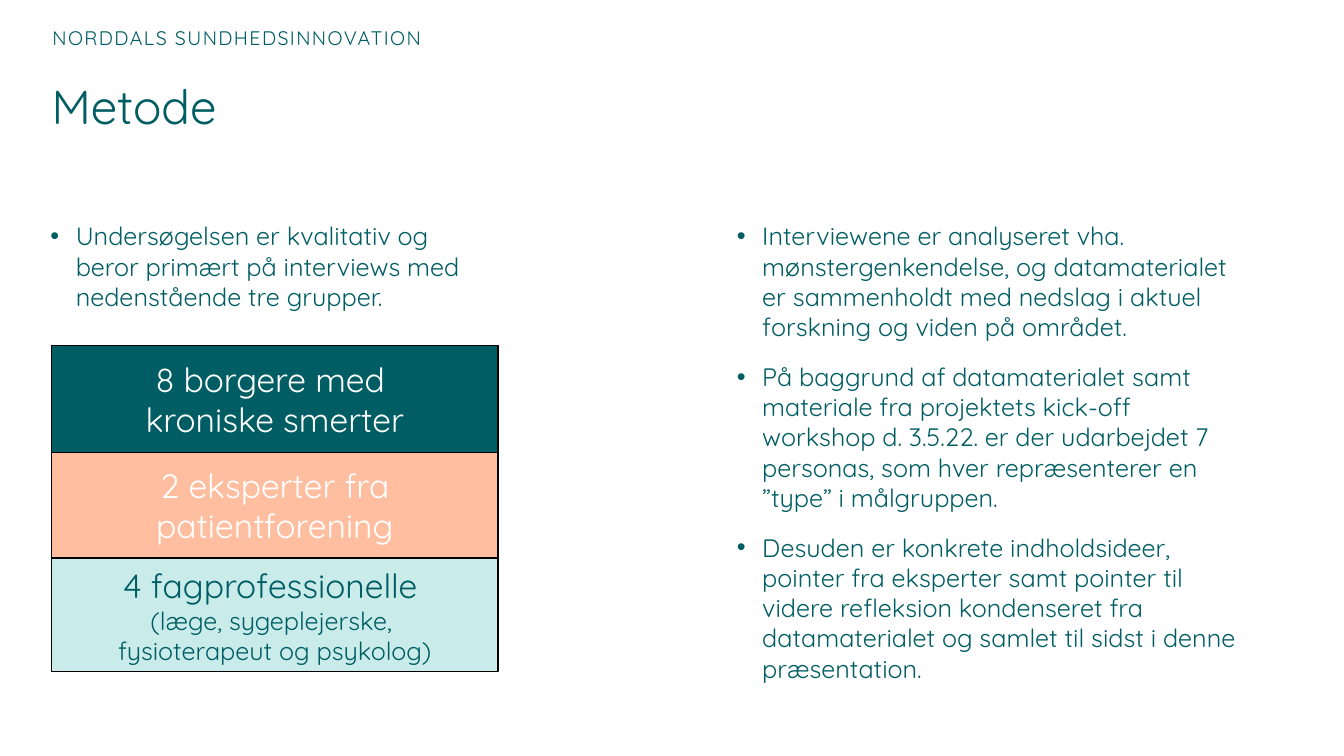
import pptx
import pptx.util
import pptx.dml.color
import pptx.enum.shapes
import pptx.enum.text
import pptx.oxml
import pptx.oxml.ns
from pptx.util import Cm

COLORS = {"teal": "005D63", "peach": "FFBE9F", "mint": "C9ECEB",
          "white": "FFFFFF", "black": "000000"}
FONT = "Quicksand"
ALIGN = pptx.enum.text.PP_ALIGN
ANCHOR = pptx.enum.text.MSO_ANCHOR

# Content: each paragraph is a list of (text, size) pieces
HEADER = [[("NORDDALS SUNDHEDSINNOVATION", 14)]]
TITLE = [[("Metode", 34)]]
BASIS = ["Undersøgelsen er kvalitativ og beror primært på interviews med "
         "nedenstående tre grupper."]
ANALYSIS = [
    "Interviewene er analyseret vha. mønstergenkendelse, og datamaterialet er "
    "sammenholdt med nedslag i aktuel forskning og viden på området.",
    "På baggrund af datamaterialet samt materiale fra projektets kick-off workshop "
    "d. 3.5.22. er der udarbejdet 7 personas, som hver repræsenterer en ”type” i målgruppen.",
    "Desuden er konkrete indholdsideer, pointer fra eksperter samt pointer til videre "
    "refleksion kondenseret fra datamaterialet og samlet til sidst i denne præsentation.",
]
# Groups from top to bottom: pieces, fill, text colour, height in cm
GROUPS = [
    ([("8 borgere med \nkroniske smerter", 24)], "teal", "white", 2.7),
    ([("2 eksperter fra patientforening", 24)], "peach", "white", 2.65),
    ([("4 fagprofessionelle \n", 24),
      ("(læge, sygeplejerske, \nfysioterapeut og psykolog)", 18)], "mint", "teal", 2.87),
]
GROUPS_LEFT, GROUPS_TOP, GROUPS_WIDTH = 1.3, 8.71, 11.25
COLUMNS = [(BASIS, 1.27, 11.25), (ANALYSIS, 18.57, 12.62)]
COLUMNS_TOP, COLUMNS_HEIGHT = 5.56, 12.32


def rgb(name):
    return pptx.dml.color.RGBColor.from_string(COLORS[name])


def write(holder, paragraphs, color="teal", align=ALIGN.LEFT, anchor=ANCHOR.TOP,
          inset=0, wrap=True, bullet=False, line_spacing=None, after=0, tracking=None):
    frame = holder.text_frame
    frame.auto_size = pptx.enum.text.MSO_AUTO_SIZE.NONE
    frame.word_wrap = wrap
    frame.vertical_anchor = anchor
    if inset is not None:
        frame.margin_left = frame.margin_right = Cm(inset)
        frame.margin_top = frame.margin_bottom = Cm(inset)
    for number, pieces in enumerate(paragraphs):
        paragraph = frame.add_paragraph() if number else frame.paragraphs[0]
        paragraph.alignment = align
        paragraph.space_before = pptx.util.Pt(0)
        paragraph.space_after = pptx.util.Pt(after)
        if line_spacing:
            paragraph.line_spacing = line_spacing
        if bullet:
            properties = paragraph._p.get_or_add_pPr()
            properties.set("marL", str(Cm(0.64)))
            properties.set("indent", str(-Cm(0.64)))
            ns = pptx.oxml.ns.nsdecls("a")
            properties.append(pptx.oxml.parse_xml(f'<a:buFont {ns} typeface="Arial"/>'))
            properties.append(pptx.oxml.parse_xml(f'<a:buChar {ns} char="•"/>'))
        for text, size in pieces:
            for index, line in enumerate(text.split("\n")):
                if index:
                    paragraph.add_line_break()
                if not line:
                    continue
                run = paragraph.add_run()
                run.text = line
                run.font.name = FONT
                run.font.size = pptx.util.Pt(size)
                run.font.color.rgb = rgb(color)
                if tracking:
                    run._r.get_or_add_rPr().set("spc", str(tracking * 100))


presentation = pptx.Presentation()
presentation.slide_width, presentation.slide_height = Cm(33.87), Cm(19.05)
slide = presentation.slides.add_slide(presentation.slide_layouts[5])

# Header and title
header = slide.shapes.add_textbox(Cm(1.32), Cm(0), Cm(15.2), Cm(1.24))
write(header, HEADER, anchor=ANCHOR.BOTTOM, wrap=False, tracking=1)
title = slide.shapes.title
title.left, title.top, title.width, title.height = Cm(1.3), Cm(2.1), Cm(15.2), Cm(2.7)
write(title, TITLE, line_spacing=0.9)

# Bullet columns
for bullets, left, width in COLUMNS:
    column = slide.shapes.add_textbox(Cm(left), Cm(COLUMNS_TOP), Cm(width), Cm(COLUMNS_HEIGHT))
    write(column, [[(text, 18)] for text in bullets], bullet=True, after=14)

# Stacked interview groups, lowest one drawn first
bottom = GROUPS_TOP + sum(group[3] for group in GROUPS)
for pieces, fill, color, height in reversed(GROUPS):
    bottom -= height
    group_box = slide.shapes.add_shape(
        pptx.enum.shapes.MSO_SHAPE.RECTANGLE,
        Cm(GROUPS_LEFT), Cm(bottom), Cm(GROUPS_WIDTH), Cm(height))
    group_box.shadow.inherit = False
    group_box.fill.solid()
    group_box.fill.fore_color.rgb = rgb(fill)
    group_box.line.color.rgb = rgb("black")
    group_box.line.width = pptx.util.Pt(1)
    write(group_box, [pieces], color=color, align=ALIGN.CENTER,
          anchor=ANCHOR.MIDDLE, inset=None)

presentation.save("out.pptx")
